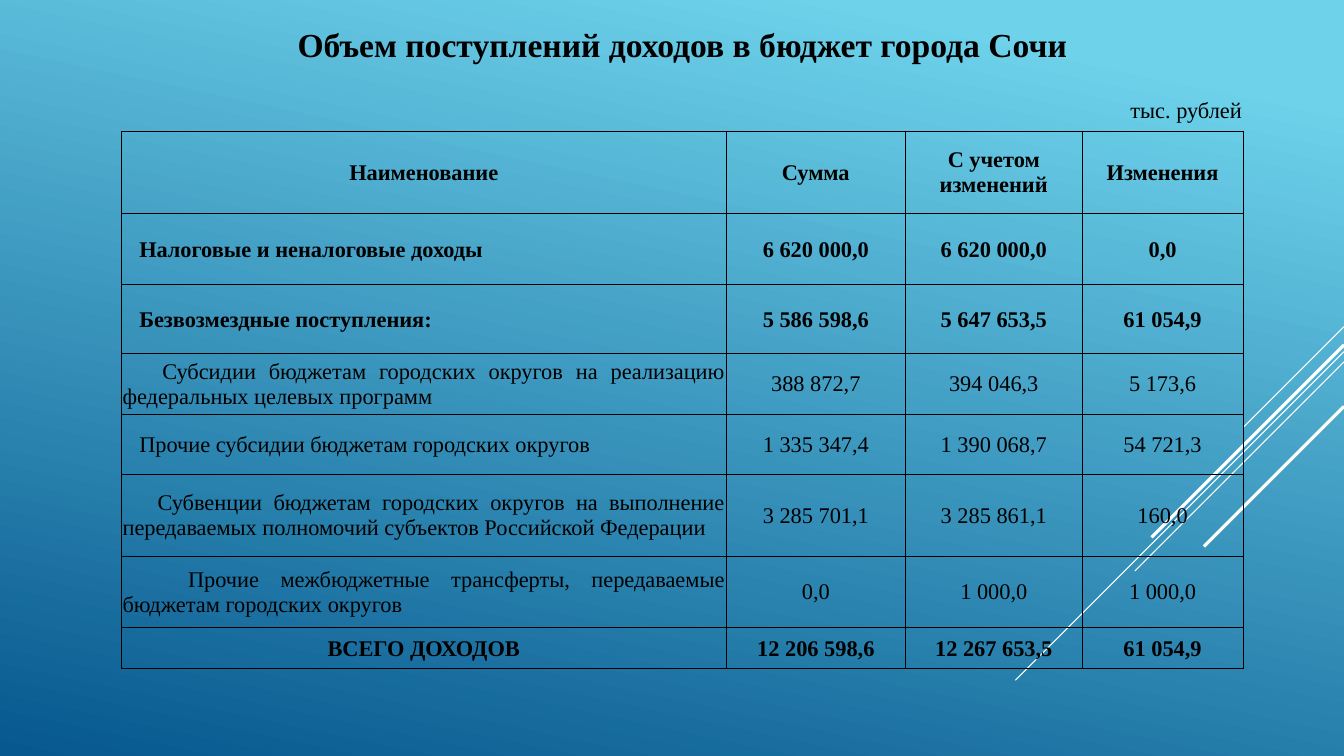
from dataclasses import dataclass

from lxml.etree import SubElement
from pptx import Presentation
from pptx.dml.color import RGBColor
from pptx.enum.shapes import MSO_CONNECTOR
from pptx.enum.text import MSO_ANCHOR, MSO_AUTO_SIZE, PP_ALIGN
from pptx.oxml.ns import qn
from pptx.slide import Slide
from pptx.table import _Cell as Cell
from pptx.text.text import TextFrame
from pptx.util import Cm, Pt

BLACK = RGBColor(0x00, 0x00, 0x00)
WHITE = RGBColor(0xFF, 0xFF, 0xFF)
SKY = RGBColor(0x6E, 0xD2, 0xEB)
DEEP_BLUE = RGBColor(0x06, 0x58, 0x8E)
FONT = "Times New Roman"
SLIDE_WIDTH, SLIDE_HEIGHT = 33.87, 19.05


@dataclass
class Ray:
    """A 45° line running down and left from the right edge, in cm."""
    top: float
    reach: float
    weight: float


@dataclass
class IncomeRow:
    height: float
    texts: tuple[str, str, str, str]
    bold: bool = False
    name_align: PP_ALIGN = PP_ALIGN.JUSTIFY
    indent: float = 0


RAYS = [
    Ray(8.23, 2.54, 0.75),
    Ray(8.86, 8.28, 0.75),
    Ray(9.12, 5.27, 0.75),
    Ray(8.69, 4.85, 2.25),
    Ray(10.24, 3.53, 2.25),
]

COLUMN_WIDTHS = [15.24, 4.52, 4.45, 4.06]
INCOME_ROWS = [
    IncomeRow(2.08, ("Наименование", "Сумма", "С учетом изменений", "Изменения"),
              bold=True, name_align=PP_ALIGN.CENTER),
    IncomeRow(1.78, ("Налоговые и неналоговые доходы",
                     "6 620 000,0", "6 620 000,0", "0,0"), bold=True, indent=0.42),
    IncomeRow(1.75, ("Безвозмездные поступления:",
                     "5 586 598,6", "5 647 653,5", "61 054,9"), bold=True, indent=0.42),
    IncomeRow(1.52, ("Субсидии бюджетам городских округов на реализацию "
                     "федеральных целевых программ",
                     "388 872,7", "394 046,3", "5 173,6"), indent=1),
    IncomeRow(1.52, ("Прочие субсидии бюджетам городских округов",
                     "1 335 347,4", "1 390 068,7", "54 721,3"), indent=0.42),
    IncomeRow(2.06, ("Субвенции бюджетам городских округов на выполнение "
                     "передаваемых полномочий субъектов Российской Федерации",
                     "3 285 701,1", "3 285 861,1", "160,0"), indent=0.88),
    IncomeRow(1.8, ("Прочие межбюджетные трансферты, передаваемые "
                    "бюджетам городских округов",
                    "0,0", "1 000,0", "1 000,0"), indent=1.65),
    IncomeRow(1.04, ("ВСЕГО ДОХОДОВ", "12 206 598,6", "12 267 653,5", "61 054,9"),
              bold=True, name_align=PP_ALIGN.CENTER),
]


def write(frame: TextFrame, text: str, size: float, bold: bool,
          align: PP_ALIGN, indent: float = 0) -> None:
    frame.text = text
    paragraph = frame.paragraphs[0]
    paragraph.alignment = align
    font = paragraph.font
    font.name, font.size, font.bold = FONT, Pt(size), bold
    font.color.rgb = BLACK
    if indent:
        properties = paragraph._p.get_or_add_pPr()
        properties.set("marL", "0")
        properties.set("indent", str(Cm(indent)))


def draw_ray(slide: Slide, ray: Ray) -> None:
    line = slide.shapes.add_connector(
        MSO_CONNECTOR.STRAIGHT, Cm(SLIDE_WIDTH), Cm(ray.top),
        Cm(SLIDE_WIDTH - ray.reach), Cm(ray.top + ray.reach))
    line.line.color.rgb = WHITE
    line.line.width = Pt(ray.weight)
    SubElement(line._element.spPr, qn("a:effectLst"))


def format_cell(cell: Cell) -> None:
    cell.vertical_anchor = MSO_ANCHOR.MIDDLE
    cell.margin_left = cell.margin_right = cell.margin_top = Cm(0.03)
    cell.margin_bottom = 0
    properties = cell._tc.get_or_add_tcPr()
    for side in ("lnL", "lnR", "lnT", "lnB"):
        border = SubElement(properties, qn(f"a:{side}"), w=str(Pt(0.5)))
        fill = SubElement(border, qn("a:solidFill"))
        SubElement(fill, qn("a:srgbClr"), val=str(BLACK))
    cell.fill.background()


def draw_income_table(slide: Slide) -> None:
    table = slide.shapes.add_table(
        len(INCOME_ROWS), len(COLUMN_WIDTHS), Cm(3.06), Cm(3.3),
        Cm(sum(COLUMN_WIDTHS)), Cm(sum(row.height for row in INCOME_ROWS))).table
    table.first_row = table.horz_banding = False
    for column, width in zip(table.columns, COLUMN_WIDTHS):
        column.width = Cm(width)
    for r, income in enumerate(INCOME_ROWS):
        table.rows[r].height = Cm(income.height)
        for c, text in enumerate(income.texts):
            cell = table.cell(r, c)
            format_cell(cell)
            align, indent = ((income.name_align, income.indent) if c == 0
                             else (PP_ALIGN.CENTER, 0))
            write(cell.text_frame, text, 16, income.bold, align, indent)


def main() -> None:
    presentation = Presentation()
    presentation.slide_width = Cm(SLIDE_WIDTH)
    presentation.slide_height = Cm(SLIDE_HEIGHT)
    slide = presentation.slides.add_slide(presentation.slide_layouts[5])

    # Background
    backdrop = slide.background.fill
    backdrop.gradient()
    backdrop.gradient_angle = 258
    for stop, position, color in zip(backdrop.gradient_stops, (0.1, 1), (SKY, DEEP_BLUE)):
        stop.position = position
        stop.color.rgb = color
    for ray in RAYS:
        draw_ray(slide, ray)

    # Title
    title = slide.shapes.title
    title.left, title.top, title.width, title.height = Cm(3.06), Cm(0.48), Cm(28.27), Cm(1.27)
    write(title.text_frame, "Объем поступлений доходов в бюджет города Сочи",
          24, True, PP_ALIGN.CENTER)
    title.text_frame.auto_size = MSO_AUTO_SIZE.SHAPE_TO_FIT_TEXT

    # Unit of measure
    unit = slide.shapes.add_textbox(Cm(28.24), Cm(2.31), Cm(3.84), Cm(0.94)).text_frame
    unit.word_wrap = True
    unit.auto_size = MSO_AUTO_SIZE.SHAPE_TO_FIT_TEXT
    write(unit, "тыс. рублей", 16, False, PP_ALIGN.LEFT)

    # Income table
    draw_income_table(slide)

    presentation.save("out.pptx")


if __name__ == "__main__":
    main()
